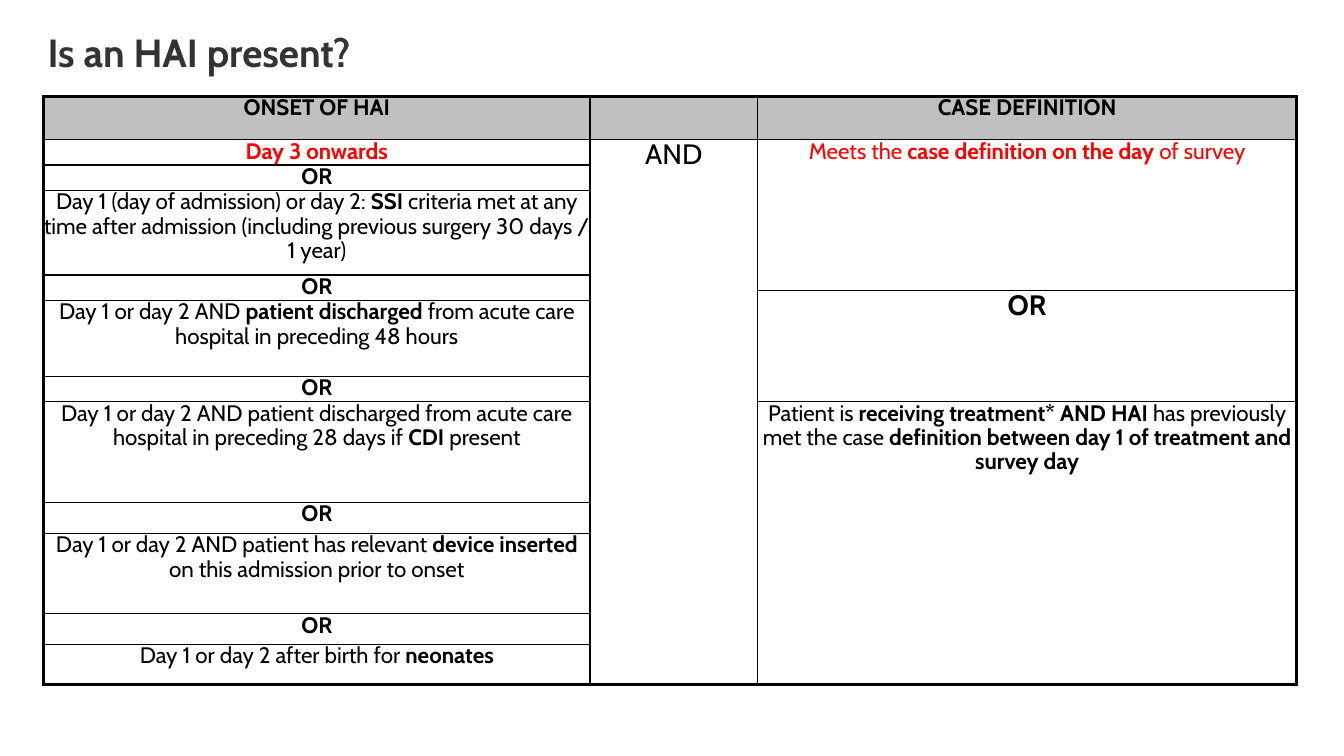
from dataclasses import dataclass

import pptx
import pptx.dml.color
import pptx.enum.text
import pptx.oxml
import pptx.oxml.ns
import pptx.util
from pptx.util import Cm

FONT = "Cabin"
BLACK, RED, GREY, TITLE_GREY = "000000", "FF0000", "C0C0C0", "333333"
INNER_LINE, OUTER_LINE = 1, 2.25
COLUMN_WIDTHS = [13.77, 4.22, 13.59]
ROW_HEIGHTS = [1.09, 0.64, 0.64, 2.13, 0.4, 0.24, 1.91, 0.64, 2.54, 0.78, 2.02, 0.78, 1.0]


@dataclass
class Entry:
    """One table entry; text between double asterisks is bold."""
    row: int
    column: int
    text: str
    rows: int = 1
    size: float = 16
    color: str = BLACK
    fill: str | None = None


ENTRIES = [
    # Header
    Entry(0, 0, "**ONSET OF HAI**", fill=GREY),
    Entry(0, 1, "", fill=GREY),
    Entry(0, 2, "**CASE DEFINITION**", fill=GREY),
    # Onset criteria
    Entry(1, 0, "**Day 3 onwards**", color=RED),
    Entry(3, 0, "Day 1 (day of admission) or day 2: **SSI **criteria met at any time "
                "after admission (including previous surgery 30 days / 1 year)"),
    Entry(6, 0, "Day 1 or day 2 AND **patient discharged** from acute care hospital "
                "in preceding 48 hours"),
    Entry(8, 0, "Day 1 or day 2 AND patient discharged from acute care hospital "
                "in preceding 28 days if **CDI **present"),
    Entry(10, 0, "Day 1 or day 2 AND patient has relevant **device inserted** "
                 "on this admission prior to onset"),
    Entry(12, 0, "Day 1 or day 2 after birth for **neonates**"),
    Entry(4, 0, "**OR**", rows=2),
    *[Entry(row, 0, "**OR**") for row in (2, 7, 9, 11)],
    # Link between the two conditions
    Entry(1, 1, "AND", rows=12, size=20),
    # Case definition
    Entry(1, 2, "Meets the **case definition on the day** of survey", rows=4, color=RED),
    Entry(5, 2, "**OR**", rows=3, size=20),
    Entry(8, 2, "Patient is **receiving treatment* AND HAI** has previously met the case "
                "**definition between day 1 of treatment and survey day**", rows=5),
]


def rgb(value: str) -> pptx.dml.color.RGBColor:
    return pptx.dml.color.RGBColor.from_string(value)


def write_text(frame, text: str, *, size: float, color: str, align: str = "CENTER") -> None:
    frame.word_wrap = True
    paragraph = frame.paragraphs[0]
    paragraph.alignment = getattr(pptx.enum.text.PP_ALIGN, align)
    paragraph.line_spacing = 0.9
    paragraph.space_before = pptx.util.Pt(0)
    for index, part in enumerate(text.split("**")):
        if part:
            run = paragraph.add_run()
            run.text = part
            run.font.name = FONT
            run.font.size = pptx.util.Pt(size)
            run.font.bold = index % 2 == 1
            run.font.color.rgb = rgb(color)


def clear_margins(box) -> None:
    box.margin_left = box.margin_top = box.margin_right = box.margin_bottom = 0


def set_borders(cell, widths: dict[str, float]) -> None:
    properties = cell._tc.get_or_add_tcPr()
    for index, (side, width) in enumerate(widths.items()):
        properties.insert(index, pptx.oxml.parse_xml(
            f'<a:ln{side} {pptx.oxml.ns.nsdecls("a")} w="{pptx.util.Pt(width)}">'
            f'<a:solidFill><a:srgbClr val="{BLACK}"/></a:solidFill></a:ln{side}>'))


def fill_entry(table, entry: Entry) -> None:
    cell = table.cell(entry.row, entry.column)
    last_row = entry.row + entry.rows - 1
    if entry.rows > 1:
        cell.merge(table.cell(last_row, entry.column))
    write_text(cell.text_frame, entry.text, size=entry.size, color=entry.color)
    if entry.fill:
        cell.fill.solid()
        cell.fill.fore_color.rgb = rgb(entry.fill)
    else:
        cell.fill.background()
    on_edge = {
        "L": entry.column == 0,
        "R": entry.column == len(COLUMN_WIDTHS) - 1,
        "T": entry.row == 0,
        "B": last_row == len(ROW_HEIGHTS) - 1,
    }
    set_borders(cell, {side: OUTER_LINE if edge else INNER_LINE
                       for side, edge in on_edge.items()})


def add_criteria_table(slide) -> None:
    table = slide.shapes.add_table(
        len(ROW_HEIGHTS), len(COLUMN_WIDTHS), Cm(1.1), Cm(2.43),
        Cm(sum(COLUMN_WIDTHS)), Cm(sum(ROW_HEIGHTS))).table
    table.first_row = table.horz_banding = False
    for column, width in zip(table.columns, COLUMN_WIDTHS):
        column.width = Cm(width)
    for row, height in zip(table.rows, ROW_HEIGHTS):
        row.height = Cm(height)
    for cell in table.iter_cells():
        clear_margins(cell)
    for entry in ENTRIES:
        fill_entry(table, entry)


def main() -> None:
    presentation = pptx.Presentation()
    presentation.slide_width, presentation.slide_height = Cm(33.87), Cm(19.05)
    slide = presentation.slides.add_slide(presentation.slide_layouts[5])

    # Title
    heading = slide.shapes.title
    heading.left, heading.top = Cm(1.2), Cm(0.84)
    heading.width, heading.height = Cm(28.65), Cm(2.2)
    clear_margins(heading.text_frame)
    heading.text_frame.vertical_anchor = pptx.enum.text.MSO_ANCHOR.TOP
    write_text(heading.text_frame, "**Is an HAI present?**",
               size=28, color=TITLE_GREY, align="LEFT")

    # Onset and case definition criteria
    add_criteria_table(slide)
    presentation.save("out.pptx")


if __name__ == "__main__":
    main()
